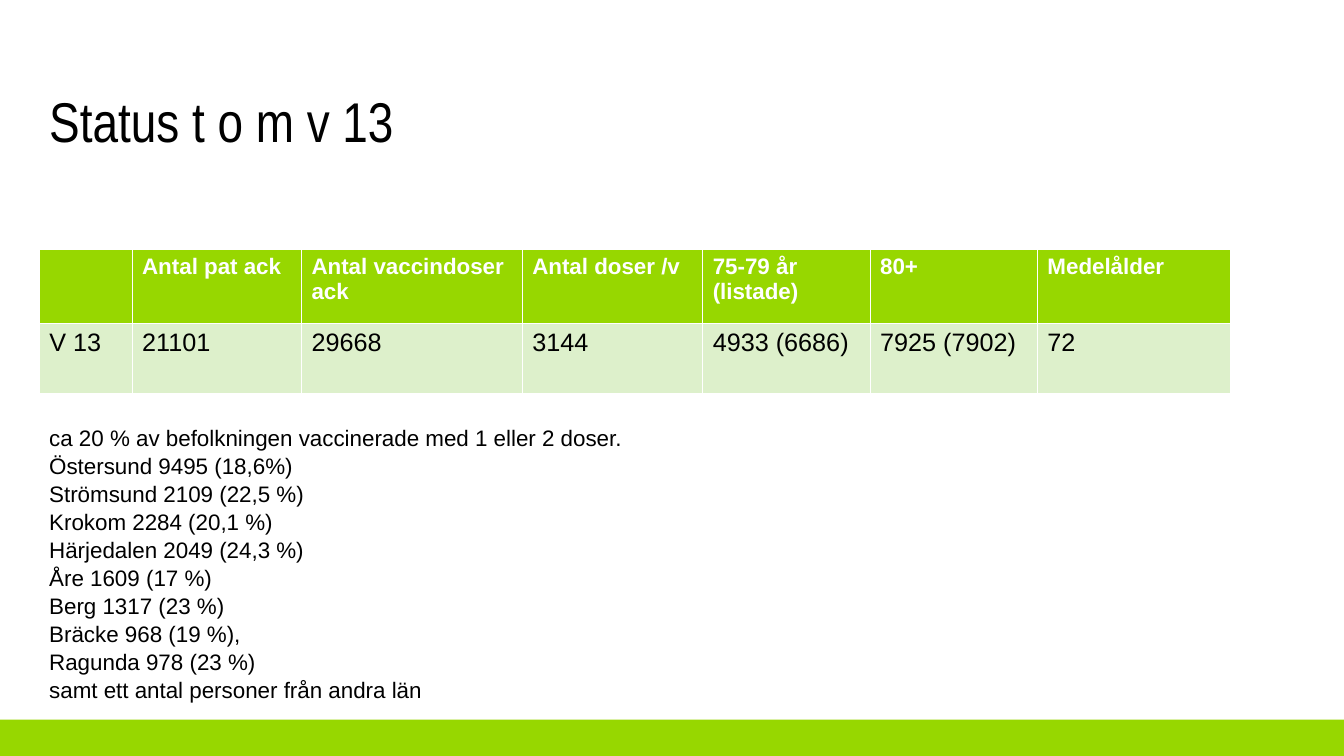
from dataclasses import dataclass

from lxml.etree import SubElement
from pptx import Presentation
from pptx.dml.color import RGBColor
from pptx.enum.shapes import MSO_SHAPE
from pptx.enum.text import MSO_ANCHOR
from pptx.oxml.ns import qn
from pptx.util import Inches, Pt


@dataclass(frozen=True)
class Theme:
    green: str = "97D700"
    pale_green: str = "DDF0CB"
    white: str = "FFFFFF"
    black: str = "000000"
    heading_font: str = "Arial Narrow"
    body_font: str = "Arial"
    title_size: int = 40
    cell_size: int = 18
    text_size: int = 16
    thin_rule: float = 0.75
    thick_rule: float = 1.5


THEME = Theme()
WIDTH, HEIGHT = 13.33, 7.5
MARGIN = 0.39
FOOTER_HEIGHT = 0.36
COLUMN_WIDTHS = (0.92, 1.68, 2.19, 1.79, 1.66, 1.66, 1.91)
ROW_HEIGHTS = (0.74, 0.69)

# Non-breaking spaces hold the words of a heading or value together.
STATUS_ROWS = (
    ("", "Antal pat ack", "Antal vaccindoser ack", "Antal doser /v",
     "75-79 år\n(listade)", "80+", "Medelålder"),
    ("V 13", "21101", "29668", "3144", "4933 (6686)", "7925 (7902)", "72"),
)
MUNICIPALITIES = """ca 20 % av befolkningen vaccinerade med 1 eller 2 doser.
Östersund 9495 (18,6%)
Strömsund 2109 (22,5 %)
Krokom 2284 (20,1 %)
Härjedalen 2049 (24,3 %)
Åre 1609 (17 %)
Berg 1317 (23 %)
Bräcke 968 (19 %),
Ragunda 978 (23 %)
samt ett antal personer från andra län"""


def write_text(frame, text, size=THEME.text_size, font=THEME.body_font,
               color=THEME.black, bold=False, line_spacing=None):
    """Fill a text frame with one paragraph for each line of text."""
    frame.word_wrap = True
    for index, line in enumerate(text.split("\n")):
        paragraph = frame.add_paragraph() if index else frame.paragraphs[0]
        paragraph.text = line
        paragraph.line_spacing = line_spacing
        paragraph.font.size = Pt(size)
        paragraph.font.name = font
        paragraph.font.bold = bold
        paragraph.font.color.rgb = RGBColor.from_string(color)


def add_text(slide, text, left, top, width, height,
             anchor=MSO_ANCHOR.TOP, **text_format):
    box = slide.shapes.add_textbox(*map(Inches, (left, top, width, height)))
    box.text_frame.vertical_anchor = anchor
    write_text(box.text_frame, text, **text_format)


def add_footer_band(slide):
    band = slide.shapes.add_shape(
        MSO_SHAPE.RECTANGLE, 0, Inches(HEIGHT - FOOTER_HEIGHT),
        Inches(WIDTH), Inches(FOOTER_HEIGHT))
    band.shadow.inherit = False
    band.fill.solid()
    band.fill.fore_color.rgb = RGBColor.from_string(THEME.green)
    band.line.fill.background()


def set_borders(cell, **widths):
    """Draw white borders, with the sides given in the order L, R, T, B."""
    properties = cell._tc.get_or_add_tcPr()
    for index, (side, width) in enumerate(widths.items()):
        border = SubElement(properties, qn(f"a:ln{side}"), w=str(int(Pt(width))))
        fill = SubElement(border, qn("a:solidFill"))
        SubElement(fill, qn("a:srgbClr"), val=THEME.white)
        properties.remove(border)
        properties.insert(index, border)


def add_status_table(slide, left, top):
    table = slide.shapes.add_table(
        len(ROW_HEIGHTS), len(COLUMN_WIDTHS), Inches(left), Inches(top),
        Inches(sum(COLUMN_WIDTHS)), Inches(sum(ROW_HEIGHTS))).table
    for column, width in zip(table.columns, COLUMN_WIDTHS):
        column.width = Inches(width)
    for row, height, values in zip(table.rows, ROW_HEIGHTS, STATUS_ROWS):
        row.height = Inches(height)
        header = values is STATUS_ROWS[0]
        for cell, value in zip(row.cells, values):
            write_text(cell.text_frame, value, bold=header,
                       size=THEME.text_size if header else THEME.cell_size,
                       color=THEME.white if header else THEME.black)
            cell.fill.solid()
            cell.fill.fore_color.rgb = RGBColor.from_string(
                THEME.green if header else THEME.pale_green)
            set_borders(cell, L=THEME.thin_rule, R=THEME.thin_rule,
                        T=THEME.thin_rule if header else THEME.thick_rule,
                        B=THEME.thick_rule if header else THEME.thin_rule)


def main():
    deck = Presentation()
    deck.slide_width, deck.slide_height = Inches(WIDTH), Inches(HEIGHT)
    slide = deck.slides.add_slide(deck.slide_layouts[6])
    add_footer_band(slide)
    add_text(slide, "Status t o m v 13", MARGIN, 0.88, 11.44, 0.71,
             anchor=MSO_ANCHOR.MIDDLE, size=THEME.title_size,
             font=THEME.heading_font, line_spacing=0.9)
    add_status_table(slide, MARGIN, 2.47)
    add_text(slide, MUNICIPALITIES, MARGIN, 4.15, 9.26, 2.79, line_spacing=1.04)
    deck.save("out.pptx")


if __name__ == "__main__":
    main()
